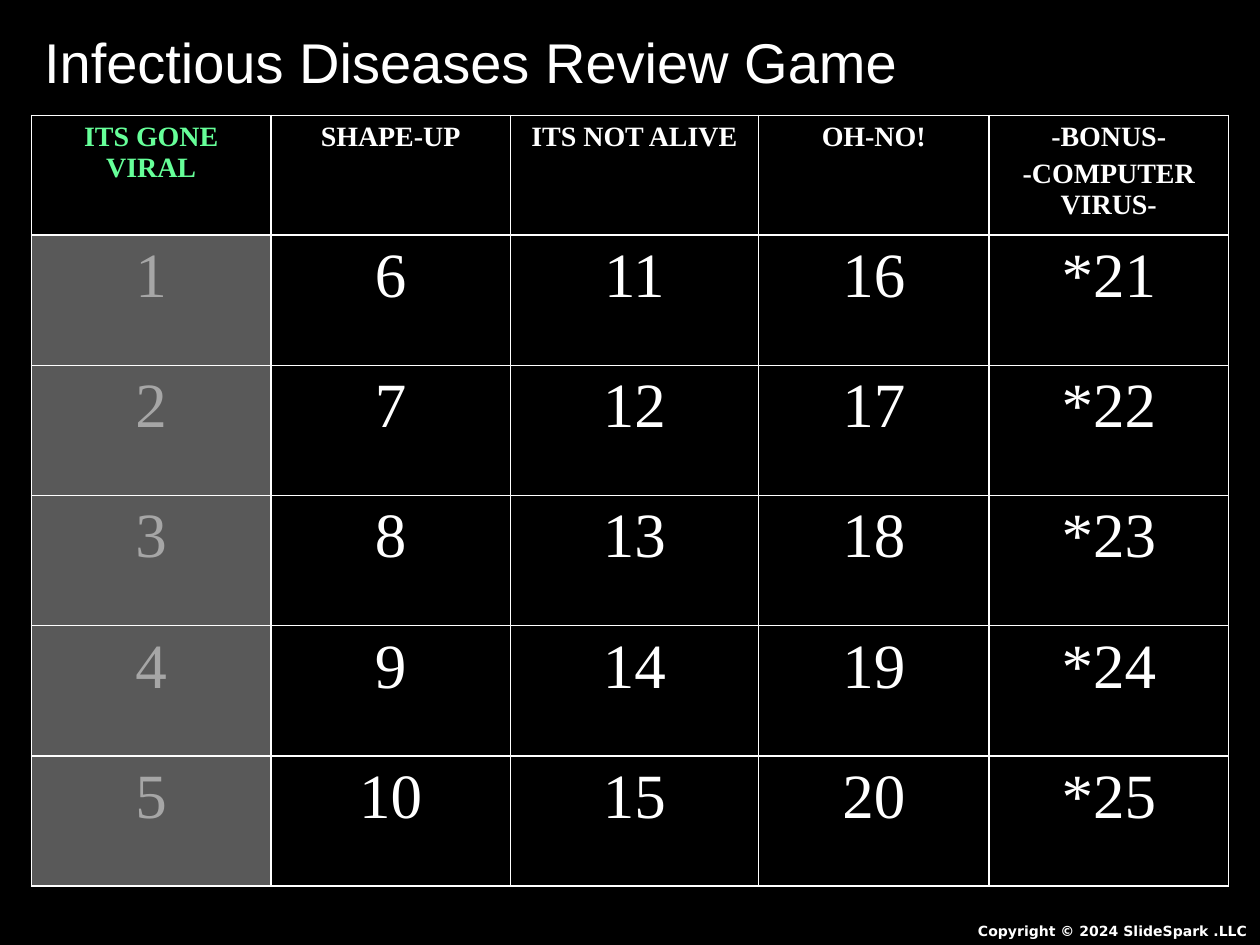
from lxml.etree import SubElement
from pptx import Presentation
from pptx.dml.color import RGBColor
from pptx.enum.text import MSO_ANCHOR, MSO_AUTO_SIZE, PP_ALIGN
from pptx.oxml.ns import qn
from pptx.util import Pt

COLORS = {
    "black": "000000",
    "white": "FFFFFF",
    "green": "66FF99",
    "used_fill": "595959",
    "used_text": "A6A6A6",
}
SERIF = "Times New Roman"
CATEGORIES = [
    ["ITS GONE VIRAL"],
    ["SHAPE-UP"],
    ["ITS NOT ALIVE"],
    ["OH-NO!"],
    ["-BONUS-", "-COMPUTER VIRUS-"],
]
QUESTIONS = 5
COL_WIDTHS = [136.8, 136.8, 141.8, 131.8, 136.8]
HEADER_HEIGHT, ROW_HEIGHT = 68.4, 74.4


def rgb(name):
    return RGBColor.from_string(COLORS[name])


def write(tf, lines, size, font, color="white", bold=False, align=PP_ALIGN.LEFT):
    for i, line in enumerate(lines):
        p = tf.paragraphs[0] if i == 0 else tf.add_paragraph()
        p.alignment = align
        p.space_before = Pt(0.2 * size if i else 0)
        r = p.add_run()
        r.text = line
        r.font.size = Pt(size)
        r.font.name = font
        r.font.bold = bold
        r.font.color.rgb = rgb(color)


def add_borders(cell):
    tc_pr = cell._tc.get_or_add_tcPr()
    for side in ("lnL", "lnR", "lnT", "lnB"):
        ln = SubElement(tc_pr, qn(f"a:{side}"), w=str(Pt(1)))
        fill = SubElement(ln, qn("a:solidFill"))
        SubElement(fill, qn("a:srgbClr"), val=COLORS["white"])


def fill_cell(cell, lines, size, color, bold=False, fill="black"):
    add_borders(cell)
    cell.fill.solid()
    cell.fill.fore_color.rgb = rgb(fill)
    write(cell.text_frame, lines, size, SERIF, color, bold, PP_ALIGN.CENTER)


def add_title(s):
    title = s.shapes.title
    title.left, title.top, title.width, title.height = Pt(18), Pt(12), Pt(702), Pt(46)
    tf = title.text_frame
    tf.auto_size = MSO_AUTO_SIZE.NONE
    tf.vertical_anchor = MSO_ANCHOR.MIDDLE
    write(tf, ["Infectious Diseases Review Game"], 32, "Arial")


def add_board(s):
    """Category headers over questions numbered down each column."""
    table = s.shapes.add_table(
        QUESTIONS + 1, len(CATEGORIES), Pt(18), Pt(66),
        Pt(sum(COL_WIDTHS)), Pt(HEADER_HEIGHT + QUESTIONS * ROW_HEIGHT)).table
    table.first_row = table.horz_banding = False
    for i, row in enumerate(table.rows):
        row.height = Pt(ROW_HEIGHT if i else HEADER_HEIGHT)
    for col, lines in enumerate(CATEGORIES):
        table.columns[col].width = Pt(COL_WIDTHS[col])
        used = col == 0
        fill_cell(table.cell(0, col), lines, 16, "green" if used else "white", bold=True)
        prefix = "*" if col == len(CATEGORIES) - 1 else ""
        for row in range(1, QUESTIONS + 1):
            fill_cell(table.cell(row, col), [f"{prefix}{col * QUESTIONS + row}"], 36,
                      "used_text" if used else "white",
                      fill="used_fill" if used else "black")


def add_copyright(s):
    tf = s.shapes.add_textbox(Pt(510), Pt(523.4), Pt(210), Pt(16.6)).text_frame
    tf.word_wrap = True
    write(tf, ["Copyright © 2024 SlideSpark .LLC"], 8, "DejaVu Sans",
          bold=True, align=PP_ALIGN.RIGHT)


def main():
    prs = Presentation()
    prs.slide_width, prs.slide_height = Pt(720), Pt(540)
    s = prs.slides.add_slide(prs.slide_layouts[5])
    s.background.fill.solid()
    s.background.fill.fore_color.rgb = rgb("black")
    add_board(s)
    add_copyright(s)
    add_title(s)
    prs.save("out.pptx")


if __name__ == "__main__":
    main()
